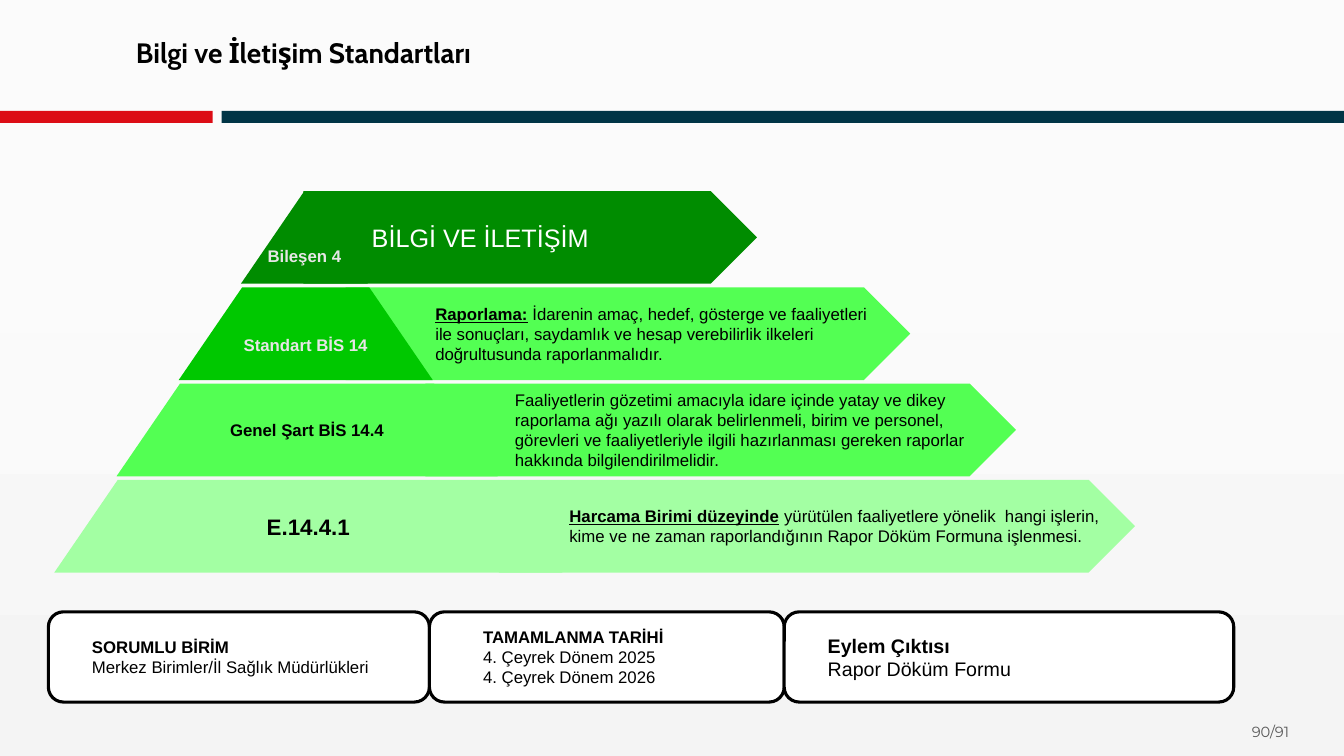
from copy import deepcopy

from pptx import Presentation
from pptx.dml.color import RGBColor
from pptx.enum.shapes import MSO_SHAPE
from pptx.enum.text import MSO_ANCHOR, PP_ALIGN
from pptx.oxml.ns import qn
from pptx.util import Inches, Pt

COLORS = {
    "red": "DC0C15", "navy": "003546", "black": "000000", "white": "FFFFFF",
    "gray": "595959", "silver": "E7E6E6", "forest": "008C00", "green": "00C800",
    "lime": "53FF53", "mint": "A3FFA3",
    "bg_top": "FBFBFB", "bg_mid": "FAFAFA", "bg_end": "F4F4F4",
}
CELL = Inches(0.1)


def grid(*cells):
    return [int(n * CELL) for n in cells]


def color(name):
    return RGBColor.from_string(COLORS[name])


class Deck:
    font = "Arial"
    border = Pt(2.25)

    def __init__(self, cols, rows):
        self.prs = Presentation()
        self.prs.slide_width, self.prs.slide_height = grid(cols, rows)
        self.s = self.prs.slides.add_slide(self.prs.slide_layouts[6])

    def background(self, stops):
        fill = self.s.background.fill
        fill.gradient()
        fill.gradient_angle = 270
        first = self.s._element.find(".//" + qn("a:gs"))
        first.addnext(deepcopy(first))
        for stop, (position, name) in zip(fill.gradient_stops, stops):
            stop.position = position
            stop.color.rgb = color(name)

    def style(self, sp, fill, line=None):
        sp.shadow.inherit = False
        sp.fill.solid()
        sp.fill.fore_color.rgb = color(fill)
        if line:
            sp.line.color.rgb = color(line)
            sp.line.width = self.border
        else:
            sp.line.fill.background()
        return sp

    def put_text(self, sp, paragraphs, size, ink, font=None, align=PP_ALIGN.LEFT,
                 anchor=MSO_ANCHOR.MIDDLE, indent=0, spacing=None, insets=(1, 0.5, 1, 0.5)):
        tf = sp.text_frame
        tf.word_wrap = True
        tf.vertical_anchor = anchor
        tf.margin_left, tf.margin_top, tf.margin_right, tf.margin_bottom = grid(*insets)
        for i, runs in enumerate(paragraphs):
            p = tf.add_paragraph() if i else tf.paragraphs[0]
            p.alignment = align
            if spacing:
                p.line_spacing = spacing
            if indent:
                pPr = p._p.get_or_add_pPr()
                pPr.set("marL", str(grid(indent)[0]))
                pPr.set("indent", "0")
            for text, marks in runs:
                r = p.add_run()
                r.text = text
                r.font.name = font or self.font
                r.font.size = Pt(size)
                r.font.color.rgb = color(ink)
                r.font.bold = "b" in marks
                r.font.underline = "u" in marks

    def text(self, box, text, marks, size, ink, **look):
        sp = self.s.shapes.add_textbox(*grid(*box))
        self.put_text(sp, [[(text, marks)]], size, ink, **look)

    def shape(self, kind, box, fill, line=None):
        return self.style(self.s.shapes.add_shape(kind, *grid(*box)), fill, line)

    def arrow(self, box, fill, runs, size, ink, indent):
        sp = self.shape(MSO_SHAPE.PENTAGON, box, fill)
        self.put_text(sp, [runs], size, ink, indent=indent)

    def layer(self, box, slope, fill, label, size, ink, insets):
        x, y, w, h = box
        corners = [(x, y + h), (x + slope, y), (x + w - slope, y), (x + w, y + h)]
        points = [grid(*corner) for corner in corners]
        builder = self.s.shapes.build_freeform(*points[0], scale=1.0)
        builder.add_line_segments(points[1:], close=True)
        sp = self.style(builder.convert_to_shape(), fill)
        self.put_text(sp, [[(label, "b")]], size, ink, align=PP_ALIGN.CENTER, insets=insets)

    def card(self, box, heading, lines, size, indent):
        sp = self.shape(MSO_SHAPE.ROUNDED_RECTANGLE, box, "white", "black")
        paragraphs = [[(heading, "b")]] + [[(line, "")] for line in lines]
        self.put_text(sp, paragraphs, size, "black", indent=indent)


def main():
    deck = Deck(133.33, 75)
    deck.background([(0, "bg_top"), (0.44, "bg_mid"), (1, "bg_end")])
    deck.text((123.2, 71.2, 9, 4), "90/91", "", 10.5, "gray",
              font="Montserrat", anchor=MSO_ANCHOR.TOP)
    deck.shape(MSO_SHAPE.RECTANGLE, (0, 11, 21.1, 1.2), "red")
    deck.shape(MSO_SHAPE.RECTANGLE, (22, 11, 111.33, 1.2), "navy")
    deck.text((12.5, 3.4, 40.7, 4), "Bilgi ve İletişim Standartları", "b", 20, "black",
              font="Cabin", spacing=0.9)

    levels = [
        (30.1, 75.1, "forest", [("BİLGİ VE İLETİŞİM", "")], 18, "white", 5.8,
         "forest", "Bileşen 4", 12, "silver", (0.2, 3.8, 0.2, 0.2)),
        (34.3, 90.3, "lime",
         [("Raporlama:", "bu"),
          (" İdarenin amaç, hedef, gösterge ve faaliyetleri ile sonuçları, saydamlık ve "
           "hesap verebilirlik ilkeleri doğrultusunda raporlanmalıdır.", "")],
         12, "black", 7.9,
         "green", "Standart BİS 14", 12, "silver", (5.4, 2.6, 5.4, 0.3)),
        (42.2, 100.8, "lime",
         [("Faaliyetlerin gözetimi amacıyla idare içinde yatay ve dikey raporlama ağı "
           "yazılı olarak belirlenmeli, birim ve personel, görevleri ve faaliyetleriyle "
           "ilgili hazırlanması gereken raporlar hakkında bilgilendirilmelidir.", "")],
         12, "black", 7.9,
         "lime", "Genel Şart BİS 14.4", 12, "black", (7.9, 0.3, 7.9, 0.3)),
        (49.5, 112.6, "mint",
         [("Harcama Birimi düzeyinde", "bu"),
          (" yürütülen faaliyetlere yönelik  hangi işlerin, kime ve ne zaman "
           "raporlandığının Rapor Döküm Formuna işlenmesi.", "")],
         12, "black", 6,
         "mint", "E.14.4.1", 16, "black", (10.5, 0.3, 10.5, 0.3)),
    ]
    pitch, height, slope = 9.55, 9.2, 6.3
    for i, (left, tip, fill, runs, size, ink, indent,
            layer_fill, label, label_size, label_ink, insets) in enumerate(levels):
        top = 18.95 + i * pitch
        deck.arrow((left, top, tip - left, height), fill, runs, size, ink, indent)
        deck.layer((23.9 - 6.17 * i, top, 2 * slope * (i + 1), height), slope,
                   layer_fill, label, label_size, label_ink, insets)

    cards = [
        (37.8, "SORUMLU BİRİM", ["Merkez Birimler/İl Sağlık Müdürlükleri"], 12, 2.9),
        (35.2, "TAMAMLANMA TARİHİ", ["4. Çeyrek Dönem 2025", "4. Çeyrek Dönem 2026"], 12, 3.9),
        (44.6, "Eylem Çıktısı", ["Rapor Döküm Formu"], 14, 2.9),
    ]
    left = 4.8
    for width, heading, lines, size, indent in cards:
        deck.card((left, 60.7, width, 8.95), heading, lines, size, indent)
        left += width

    deck.prs.save("out.pptx")


if __name__ == "__main__":
    main()
